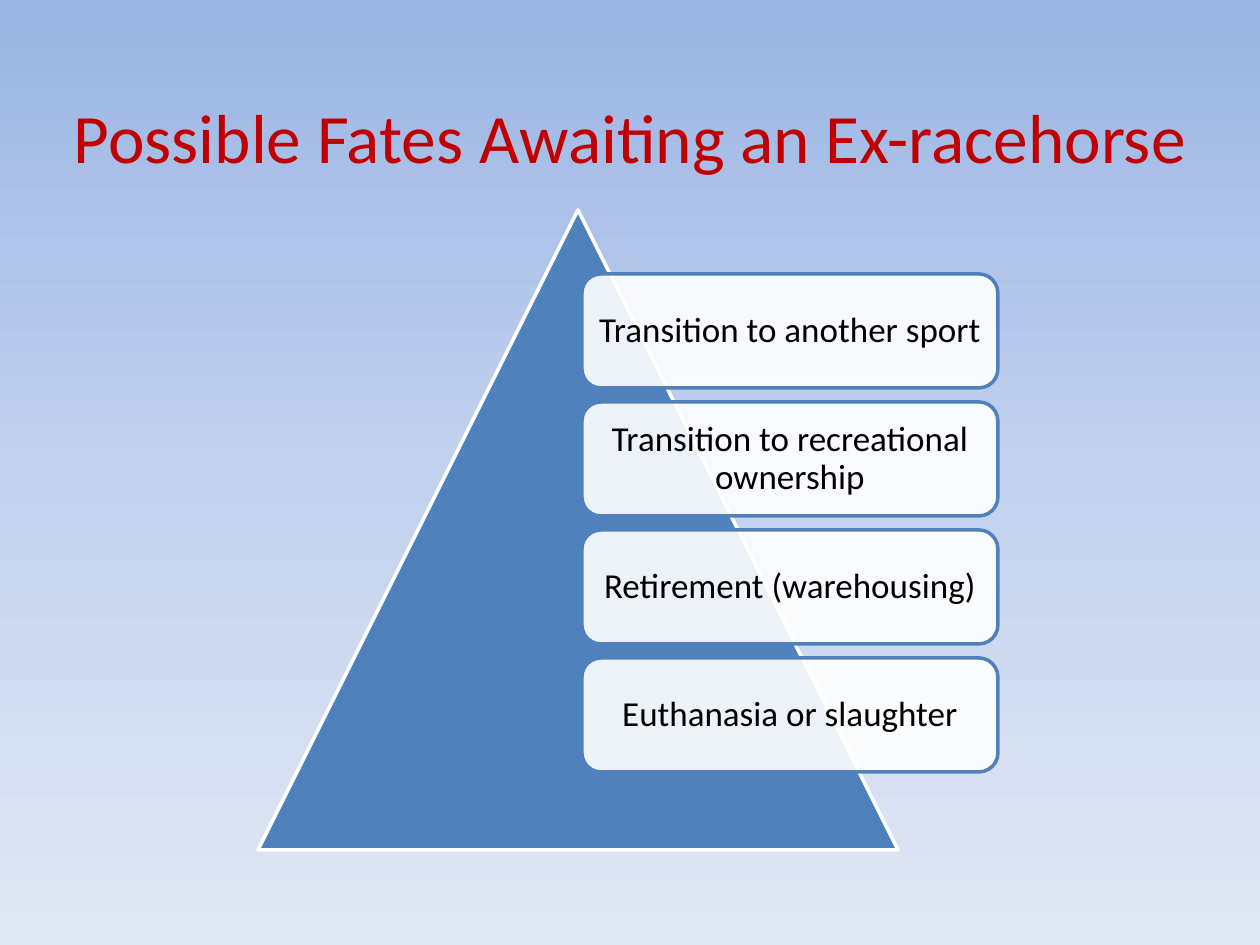
import copy

import pptx
import pptx.dml.color
import pptx.enum.shapes
import pptx.enum.text
import pptx.oxml
import pptx.oxml.ns
import pptx.util

EMU_PER_PX = 914400 / 126
FONT = "Calibri"
COLORS = {
    "sky_top": "9AB5E4",
    "sky_middle": "C2D1ED",
    "sky_bottom": "E1E8F5",
    "title": "C00000",
    "blue": "4F81BD",
    "white": "FFFFFF",
    "black": "000000",
}
FATES = [
    "Transition to another sport",
    "Transition to recreational ownership",
    "Retirement (warehousing)",
    "Euthanasia or slaughter",
]


def px(length):
    return pptx.util.Emu(round(length * EMU_PER_PX))


def rgb(name):
    return pptx.dml.color.RGBColor.from_string(COLORS[name])


def paint_background(slide):
    fill = slide.background.fill
    fill.gradient()
    fill.gradient_angle = 270
    # A new gradient has two stops; add the middle one
    first_stop = slide.element.xpath(".//a:gsLst/a:gs")[0]
    first_stop.addnext(copy.deepcopy(first_stop))
    stops = zip(fill.gradient_stops, (0, 0.5, 1), ("sky_top", "sky_middle", "sky_bottom"))
    for stop, position, color in stops:
        stop.position = position
        stop.color.rgb = rgb(color)


def write_text(shape, text, size, color, margins):
    frame = shape.text_frame
    frame.text = text
    frame.word_wrap = True
    frame.vertical_anchor = pptx.enum.text.MSO_ANCHOR.MIDDLE
    frame.margin_left, frame.margin_top, frame.margin_right, frame.margin_bottom = map(px, margins)
    paragraph = frame.paragraphs[0]
    paragraph.alignment = pptx.enum.text.PP_ALIGN.CENTER
    font = paragraph.runs[0].font
    font.name = FONT
    font.size = pptx.util.Pt(size)
    font.color.rgb = rgb(color)
    return paragraph


def add_title(slide, text):
    title = slide.shapes.add_textbox(px(21), px(84), px(1218), px(168))
    # The deep bottom margin lifts the line above the middle of the box
    write_text(title, text, 39.6, "title", (12, 6, 12, 70))


def add_outlined_shape(group, kind, box, fill_color, line_color):
    shape = group.shapes.add_shape(kind, *map(px, box))
    shape.shadow.inherit = False
    shape.fill.solid()
    shape.fill.fore_color.rgb = rgb(fill_color)
    shape.line.color.rgb = rgb(line_color)
    shape.line.width = pptx.util.Pt(2)
    return shape


def set_opacity(shape, percent):
    color = shape.element.spPr.xpath("./a:solidFill/a:srgbClr")[0]
    alpha = pptx.oxml.parse_xml(
        f'<a:alpha {pptx.oxml.ns.nsdecls("a")} val="{percent * 1000}"/>')
    color.append(alpha)


def add_fate(group, text, top):
    kind = pptx.enum.shapes.MSO_SHAPE.ROUNDED_RECTANGLE
    card = add_outlined_shape(group, kind, (582, top, 416, 114), "white", "blue")
    set_opacity(card, 90)
    paragraph = write_text(card, text, 20, "black", (5, 5, 5, 5))
    paragraph.line_spacing = 0.9


def main():
    presentation = pptx.Presentation()
    presentation.slide_width = px(1260)
    presentation.slide_height = px(945)
    slide = presentation.slides.add_slide(presentation.slide_layouts[6])

    paint_background(slide)
    add_title(slide, "Possible Fates Awaiting an Ex-racehorse")

    # Pyramid with the list of fates over its right side
    pyramid = slide.shapes.add_group_shape()
    add_outlined_shape(pyramid, pptx.enum.shapes.MSO_SHAPE.ISOSCELES_TRIANGLE,
                       (258, 210, 640, 640), "blue", "white")
    for index, fate in enumerate(FATES):
        add_fate(pyramid, fate, 274 + 128 * index)

    presentation.save("out.pptx")


if __name__ == "__main__":
    main()
